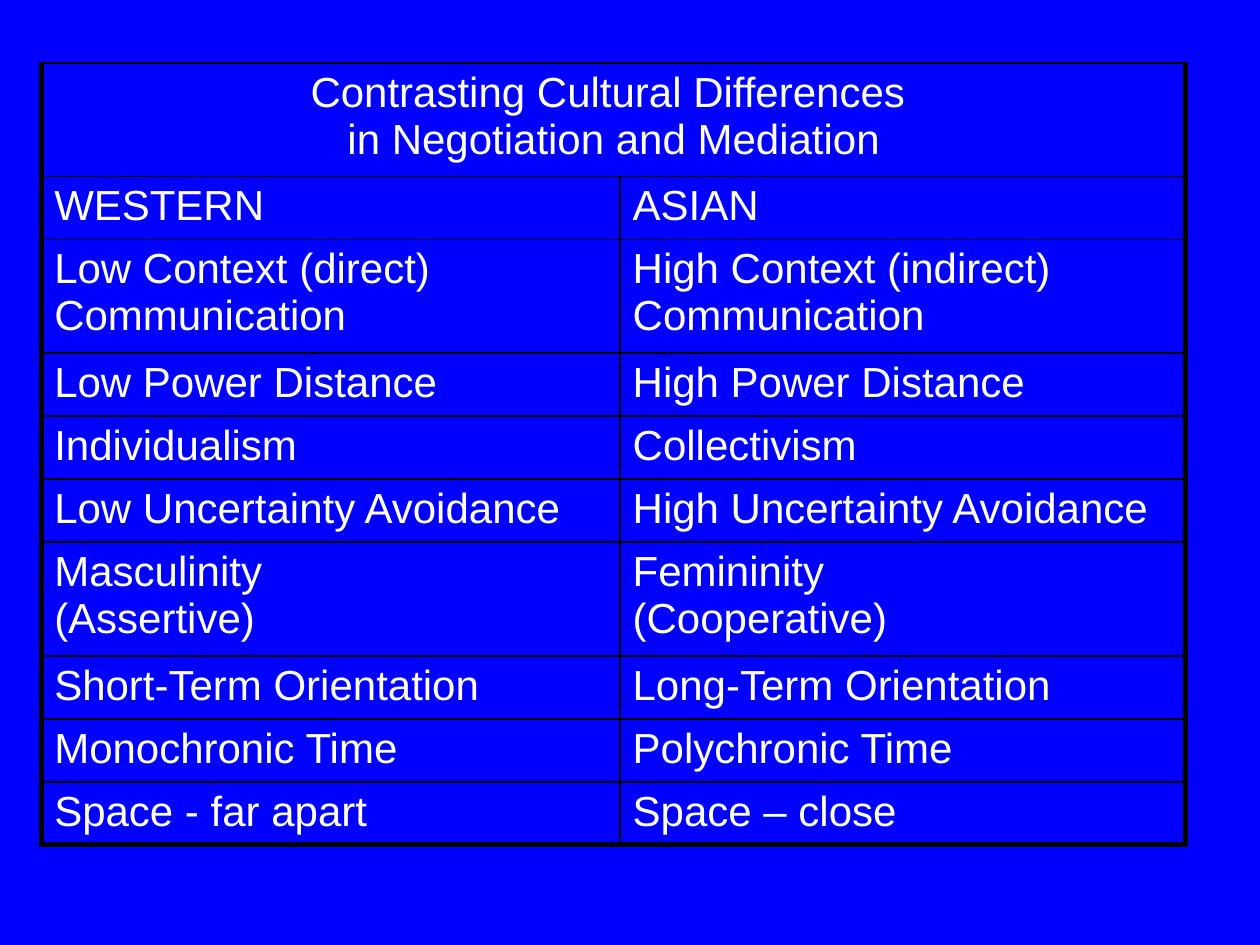
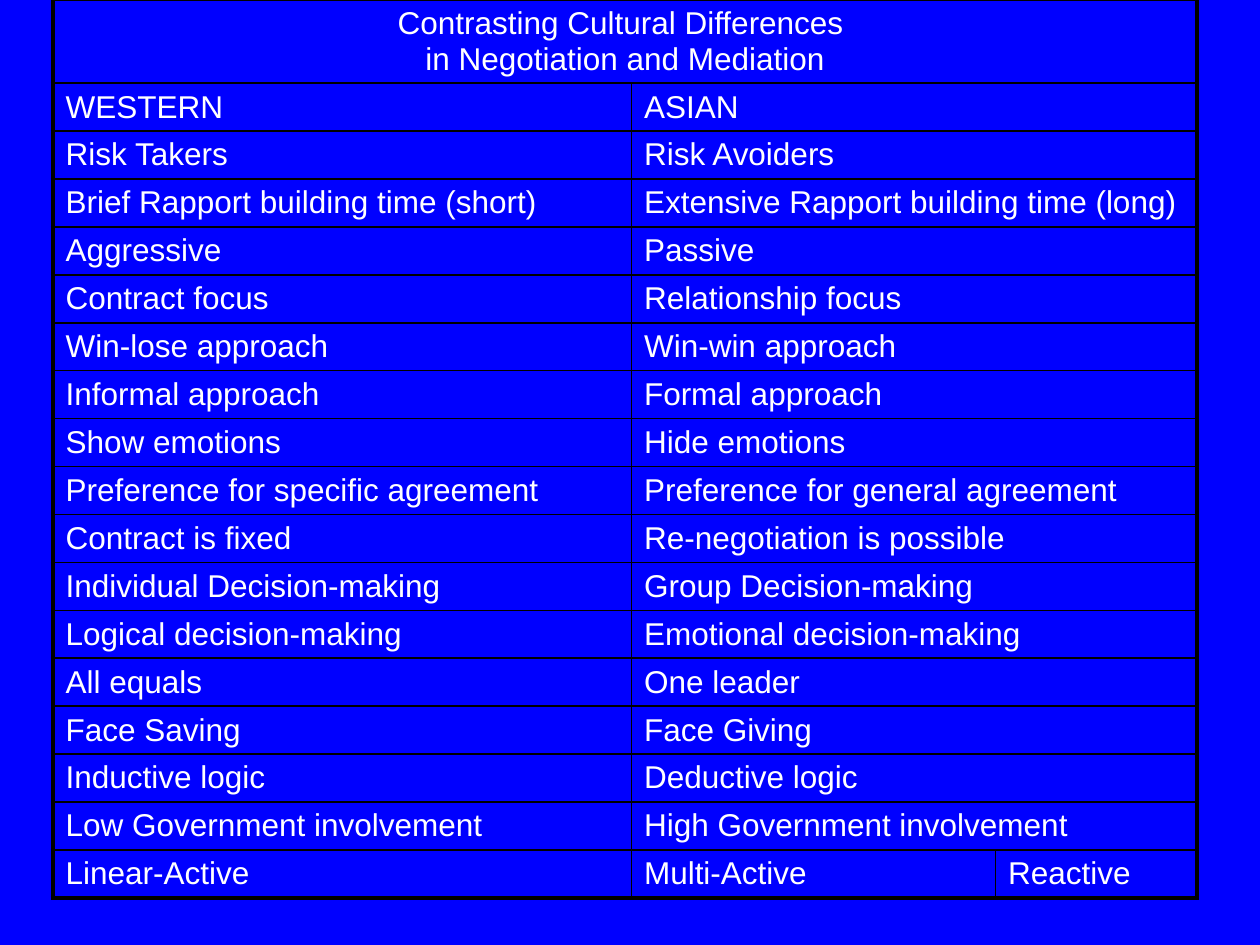
from pptx import Presentation
from pptx.dml.color import RGBColor
from pptx.enum.text import PP_ALIGN
from pptx.oxml import parse_xml
from pptx.oxml.ns import nsdecls
from pptx.util import Cm, Pt

COLORS = {"back": "0000FF", "text": "FFFFFF", "line": "000000"}
FONT = "Arial"
THIN, THICK = Pt(1), Pt(3)

HEAD = [
    ["Contrasting Cultural Differences \nin Negotiation and Mediation"],
    ["WESTERN", "ASIAN"],
]
VALUES = HEAD + [
    ["Low Context (direct) Communication", "High Context (indirect) Communication"],
    ["Low Power Distance", "High Power Distance"],
    ["Individualism", "Collectivism"],
    ["Low Uncertainty Avoidance", "High Uncertainty Avoidance"],
    ["Masculinity\n(Assertive)", "Femininity\n(Cooperative)"],
    ["Short-Term Orientation", "Long-Term Orientation"],
    ["Monochronic Time", "Polychronic Time"],
    ["Space - far apart", "Space – close"],
]
STYLES = HEAD + [
    ["Risk Takers", "Risk Avoiders"],
    ["Brief Rapport building time (short)", "Extensive Rapport building time (long)"],
    ["Aggressive", "Passive"],
    ["Contract focus", "Relationship focus"],
    ["Win-lose approach", "Win-win approach"],
    ["Informal approach", "Formal approach"],
    ["Show emotions", "Hide emotions"],
    ["Preference for specific agreement", "Preference for general agreement"],
    ["Contract is fixed", "Re-negotiation is possible"],
    ["Individual Decision-making", "Group Decision-making"],
    ["Logical decision-making", "Emotional decision-making"],
    ["All equals", "One leader"],
    ["Face Saving", "Face Giving"],
    ["Inductive logic", "Deductive logic"],
    ["Low Government involvement", "High Government involvement"],
    ["Linear-Active", "Multi-Active", "Reactive"],
]


def color(name):
    return RGBColor.from_string(COLORS[name])


def set_borders(cell, left, right, top, bottom):
    props = cell._tc.get_or_add_tcPr()
    sides = {"lnL": left, "lnR": right, "lnT": top, "lnB": bottom}
    for place, (tag, width) in enumerate(sides.items()):
        line = parse_xml(
            f'<a:{tag} {nsdecls("a")} w="{width}"><a:solidFill>'
            f'<a:srgbClr val="{COLORS["line"]}"/></a:solidFill></a:{tag}>'
        )
        props.insert(place, line)


def write(cell, text, size, align):
    cell.text_frame.text = text
    for para in cell.text_frame.paragraphs:
        para.alignment = align
        for run in para.runs:
            run.font.name = FONT
            run.font.size = size
            run.font.color.rgb = color("text")


def frame_cells(table):
    """Draw thin rules inside the table and thick ones at its sides and foot."""
    last_row, last_col = len(table.rows) - 1, len(table.columns) - 1
    for r in range(last_row + 1):
        for c in range(last_col + 1):
            cell = table.cell(r, c)
            end = c + cell.span_width - 1 if cell.is_merge_origin else c
            cell.fill.background()
            set_borders(
                cell,
                left=THIN if c else THICK,
                right=THICK if end == last_col else THIN,
                top=THIN,
                bottom=THICK if r == last_row else THIN,
            )


def add_contrast(deck, rows, left, top, height, widths, size, low, high, tall):
    """Add a slide with one table; the last text of a row fills the row."""
    slide = deck.slides.add_slide(deck.slide_layouts[6])
    shape = slide.shapes.add_table(
        len(rows), len(widths), Cm(left), Cm(top), Cm(sum(widths)), Cm(height)
    )
    table = shape.table
    table.first_row = table.horz_banding = False
    for col, width in zip(table.columns, widths):
        col.width = Cm(width)
    last = len(widths) - 1
    for r, texts in enumerate(rows):
        table.rows[r].height = Cm(high if r in tall else low)
        end = len(texts) - 1
        if end < last:
            table.cell(r, end).merge(table.cell(r, last))
        align = PP_ALIGN.CENTER if len(texts) == 1 else PP_ALIGN.LEFT
        for c, text in enumerate(texts):
            write(table.cell(r, c), text, size, align)
    frame_cells(table)
    shape.height = Cm(height)


def main():
    deck = Presentation()
    deck.slide_width, deck.slide_height = Cm(25.4), Cm(19.05)
    fill = deck.slide_master.background.fill
    fill.solid()
    fill.fore_color.rgb = color("back")
    add_contrast(deck, VALUES, left=0.84, top=1.27, height=15.75,
                 widths=[11.66, 11.4], size=Pt(24),
                 low=1.27, high=2.29, tall={0, 2, 6})
    add_contrast(deck, STYLES, left=1.07, top=0, height=19.05,
                 widths=[11.66, 7.34, 4.06], size=Pt(18),
                 low=0.76, high=1.27, tall={0})
    deck.save("out.pptx")


if __name__ == "__main__":
    main()
